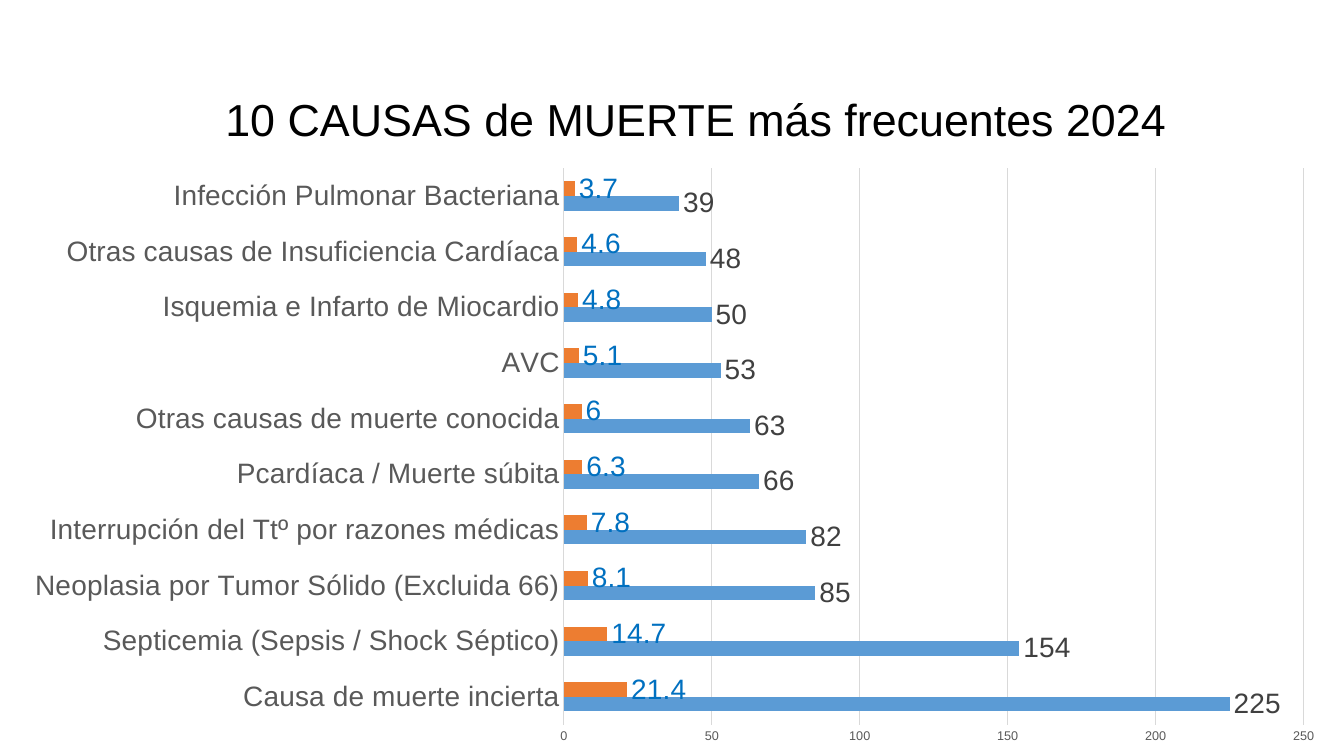
from dataclasses import dataclass

from lxml import etree
from pptx import Presentation
from pptx.chart.data import CategoryChartData
from pptx.dml.color import RGBColor
from pptx.enum.chart import XL_CHART_TYPE, XL_LABEL_POSITION, XL_TICK_MARK
from pptx.enum.text import PP_ALIGN
from pptx.oxml.ns import qn
from pptx.util import Inches, Pt

BAR_CLUSTERED = XL_CHART_TYPE.BAR_CLUSTERED
OUTSIDE_END = XL_LABEL_POSITION.OUTSIDE_END
NO_TICK = XL_TICK_MARK.NONE
CENTER = PP_ALIGN.CENTER


@dataclass(frozen=True)
class Theme:
    font: str = "Arial"
    black: str = "000000"
    axis_text: str = "595959"
    grid: str = "D9D9D9"
    count_bar: str = "5B9BD5"
    count_text: str = "404040"
    percent_bar: str = "ED7D31"
    percent_text: str = "0070C0"
    title_size: int = 32
    label_size: int = 20
    chart_size: int = 10
    scale_size: int = 9
    line_width: float = 0.75


THEME = Theme()

# Cause, deaths, percentage of all deaths
CAUSES = [
    ("Causa de muerte incierta", 225, 21.4),
    ("Septicemia (Sepsis / Shock Séptico)", 154, 14.7),
    ("Neoplasia por Tumor Sólido (Excluida 66)", 85, 8.1),
    ("Interrupción del Ttº por razones médicas", 82, 7.8),
    ("Pcardíaca / Muerte súbita", 66, 6.3),
    ("Otras causas de muerte conocida", 63, 6),
    ("AVC", 53, 5.1),
    ("Isquemia e Infarto de Miocardio", 50, 4.8),
    ("Otras causas de Insuficiencia Cardíaca", 48, 4.6),
    ("Infección Pulmonar Bacteriana", 39, 3.7),
]


def format_font(font, size, color):
    font.name = THEME.font
    font.size = Pt(size)
    font.color.rgb = RGBColor.from_string(color)


def format_line(line):
    line.color.rgb = RGBColor.from_string(THEME.grid)
    line.width = Pt(THEME.line_width)


def add_text(slide, text, left, top, width, height, *, size, color, align):
    shape = slide.shapes.add_textbox(
        Inches(left), Inches(top), Inches(width), Inches(height))
    shape.text_frame.word_wrap = True
    paragraph = shape.text_frame.paragraphs[0]
    paragraph.alignment = align
    run = paragraph.add_run()
    run.text = text
    format_font(run.font, size, color)


def set_plot_area(chart, **fractions):
    """Fix the inner plot area, in fractions of the chart's size."""
    plot_area = chart._chartSpace.chart.plotArea
    for old_layout in plot_area.findall(qn("c:layout")):
        plot_area.remove(old_layout)
    layout = etree.Element(qn("c:layout"))
    manual = etree.SubElement(layout, qn("c:manualLayout"))
    settings = {"layoutTarget": "inner", "xMode": "edge", "yMode": "edge", **fractions}
    for name, value in settings.items():
        etree.SubElement(manual, qn(f"c:{name}")).set("val", str(value))
    plot_area.insert(0, layout)


def format_axes(chart):
    for axis, size in ((chart.category_axis, THEME.label_size),
                       (chart.value_axis, THEME.scale_size)):
        axis.major_tick_mark = axis.minor_tick_mark = NO_TICK
        format_font(axis.tick_labels.font, size, THEME.axis_text)
    format_line(chart.category_axis.format.line)

    scale = chart.value_axis
    scale.minimum_scale, scale.maximum_scale, scale.major_unit = 0, 250, 50
    scale.tick_labels.number_format = "0"
    scale.tick_labels.number_format_is_linked = False
    scale.format.line.fill.background()
    scale.has_major_gridlines = True
    format_line(scale.major_gridlines.format.line)


def format_series(series, bar_color, text_color, number_format):
    series.invert_if_negative = False
    series.format.fill.solid()
    series.format.fill.fore_color.rgb = RGBColor.from_string(bar_color)
    labels = series.data_labels
    labels.show_value = True
    labels.position = OUTSIDE_END
    labels.number_format = number_format
    labels.number_format_is_linked = False
    format_font(labels.font, THEME.label_size, text_color)


def add_causes_chart(slide, left, top, width, height):
    names, deaths, percentages = zip(*CAUSES)
    data = CategoryChartData()
    data.categories = names
    data.add_series("Series 1", deaths)
    data.add_series("Series 2", percentages)
    chart = slide.shapes.add_chart(
        BAR_CLUSTERED, Inches(left), Inches(top), Inches(width), Inches(height), data).chart
    chart.has_title = False
    chart.has_legend = False
    format_font(chart.font, THEME.chart_size, THEME.black)
    set_plot_area(chart, x=0.417, y=0.02, w=0.555, h=0.928)
    format_axes(chart)

    plot = chart.plots[0]
    plot.gap_width = 182
    plot.overlap = 0
    plot.vary_by_categories = False
    count, percent = plot.series
    format_series(count, THEME.count_bar, THEME.count_text, "0")
    format_series(percent, THEME.percent_bar, THEME.percent_text, "General")


def main():
    presentation = Presentation()
    presentation.slide_width = Inches(13.33)
    presentation.slide_height = Inches(7.5)
    slide = presentation.slides.add_slide(presentation.slide_layouts[6])
    add_causes_chart(slide, 0.08, 1.55, 13.22, 5.95)
    add_text(slide, "10 CAUSAS de MUERTE más frecuentes 2024", 1.41, 0.86, 10.99, 0.44,
             size=THEME.title_size, color=THEME.black, align=CENTER)
    presentation.save("out.pptx")


if __name__ == "__main__":
    main()
